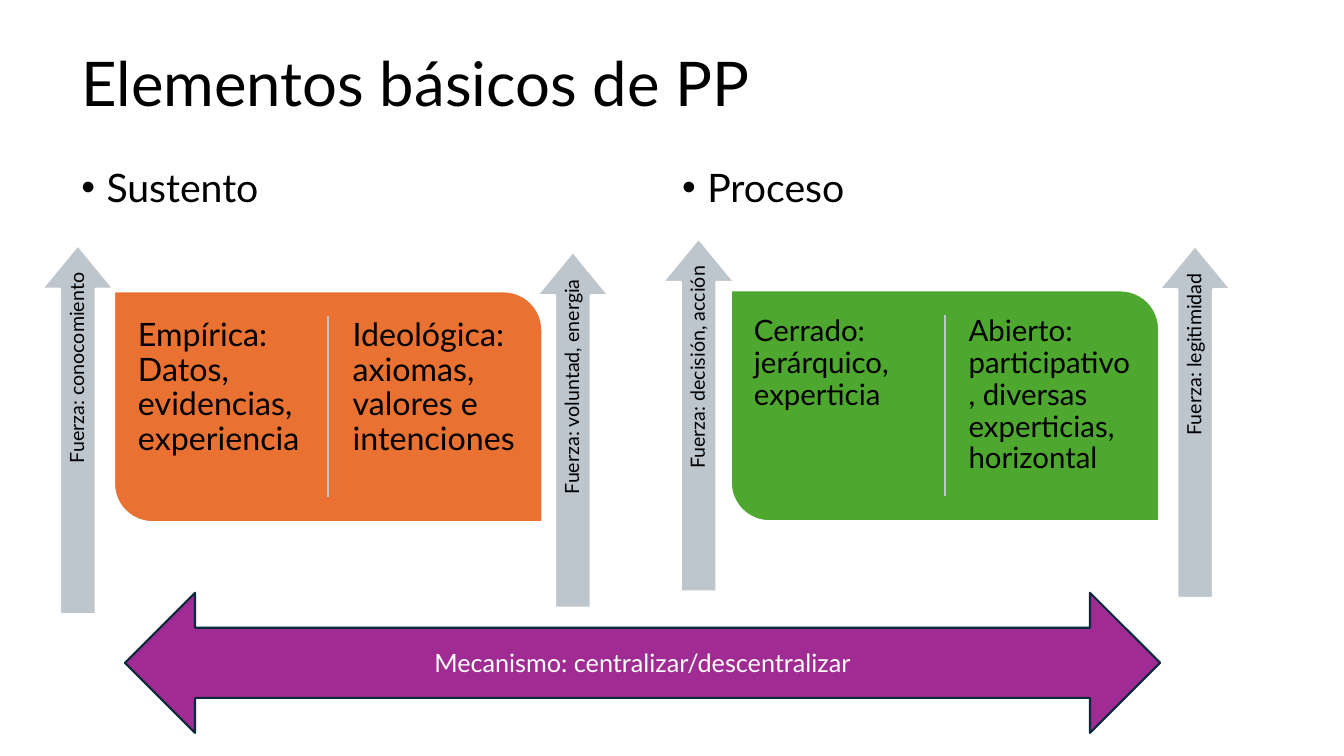
from lxml.etree import SubElement
from pptx import Presentation
from pptx.dml.color import RGBColor
from pptx.enum.shapes import MSO_CONNECTOR, MSO_SHAPE
from pptx.enum.text import MSO_ANCHOR, PP_ALIGN
from pptx.oxml.ns import qn
from pptx.util import Pt

BLACK = RGBColor(0x00, 0x00, 0x00)
WHITE = RGBColor(0xFF, 0xFF, 0xFF)
ORANGE = RGBColor(0xE9, 0x71, 0x32)
GREEN = RGBColor(0x4E, 0xA7, 0x2E)
GRAY = RGBColor(0xBD, 0xC5, 0xCD)
PURPLE = RGBColor(0xA0, 0x2B, 0x93)
NAVY = RGBColor(0x09, 0x2A, 0x39)
FONT = "Lato"


def write(sp, text, size, color=BLACK, align=PP_ALIGN.LEFT, anchor=MSO_ANCHOR.TOP,
          inset=None, spacing=0.9):
    """Put one formatted paragraph in a shape and return it."""
    tf = sp.text_frame
    tf.word_wrap = True
    tf.vertical_anchor = anchor
    if inset is not None:
        tf.margin_left = tf.margin_right = tf.margin_top = tf.margin_bottom = Pt(inset)
    tf.text = text
    p = tf.paragraphs[0]
    p.alignment = align
    p.line_spacing = spacing
    font = p.runs[0].font
    font.name, font.size, font.color.rgb = FONT, Pt(size), color
    return p


def add_box(slide, x, y, w, h):
    """Add an empty text box."""
    return slide.shapes.add_textbox(Pt(x), Pt(y), Pt(w), Pt(h))


def add_block(slide, kind, x, y, w, h, fill, line=WHITE):
    """Add a filled and outlined preset shape."""
    sp = slide.shapes.add_shape(kind, Pt(x), Pt(y), Pt(w), Pt(h))
    sp.shadow.inherit = False
    sp.fill.solid()
    sp.fill.fore_color.rgb = fill
    sp.line.color.rgb = line
    sp.line.width = Pt(1.5)
    return sp


def add_title(slide, x, y, w, h, text):
    """Add the slide title."""
    write(add_box(slide, x, y, w, h), text, 44, anchor=MSO_ANCHOR.MIDDLE)


def add_heading(slide, x, y, w, h, text):
    """Add a bulleted column heading."""
    p = write(add_box(slide, x, y, w, h), text, 28)
    p.space_before = Pt(10)
    pPr = p._p.get_or_add_pPr()
    pPr.set("marL", str(Pt(18)))
    pPr.set("indent", str(Pt(-18)))
    SubElement(pPr, qn("a:buFont"), typeface="Arial")
    SubElement(pPr, qn("a:buChar"), char="•")


def add_card(slide, x, y, w, h, fill, texts, size, inset):
    """Add a card with two texts and a divider between them."""
    card = add_block(slide, MSO_SHAPE.ROUND_2_DIAG_RECTANGLE, x, y, w, h, fill)
    card.adjustments[0], card.adjustments[1] = 0, 0.167
    mid = x + w / 2
    divider = slide.shapes.add_connector(
        MSO_CONNECTOR.STRAIGHT, Pt(mid), Pt(y + 17.3), Pt(mid), Pt(y + h - 18))
    divider.line.color.rgb = GRAY
    divider.line.width = Pt(1.5)
    SubElement(divider._element.spPr, qn("a:effectLst"))
    for left, text in zip((x + 10.1, mid + 10.4), texts):
        write(add_box(slide, left, y + 12.2, 132.5, 139.7), text, size, inset=inset)


def add_force(slide, cx, cy, length, text):
    """Add an upward arrow centred on a point, with its label along it."""
    arrow = add_block(slide, MSO_SHAPE.RIGHT_ARROW, cx - length / 2, cy - 25.5,
                      length, 51, GRAY)
    arrow.adjustments[0], arrow.adjustments[1] = 0.498, 0.607
    arrow.rotation = 270
    span = length - 15.5
    label = add_box(slide, cx - span / 2, cy - 5, span, 25)
    label.rotation = 270
    write(label, text, 14, align=PP_ALIGN.RIGHT, anchor=MSO_ANCHOR.MIDDLE, inset=4.3)


def add_mechanism(slide, x, y, w, h, text):
    """Add the double arrow at the bottom."""
    sp = add_block(slide, MSO_SHAPE.LEFT_RIGHT_ARROW, x, y, w, h, PURPLE, NAVY)
    write(sp, text, 18, WHITE, PP_ALIGN.CENTER, MSO_ANCHOR.MIDDLE, spacing=1.0)


def main():
    """Build the slide and save it."""
    prs = Presentation()
    prs.slide_width, prs.slide_height = Pt(960), Pt(540)
    slide = prs.slides.add_slide(prs.slide_layouts[6])
    add_title(slide, 51, 9.4, 828, 104.4, "Elementos básicos de PP")
    add_heading(slide, 51, 116.6, 408, 342.7, "Sustento")
    add_heading(slide, 480.2, 116.6, 408, 342.7, "Proceso")
    add_card(slide, 81.4, 208.1, 306, 164.9, ORANGE,
             ("Empírica: Datos, evidencias, experiencia",
              "Ideológica: axiomas, valores e intenciones"), 23, 7.2)
    add_card(slide, 522, 207.4, 306, 164.9, GREEN,
             ("Cerrado: jerárquico, experticia",
              "Abierto: participativo, diversas experticias, horizontal"), 21, 6.5)
    for cx, cy, length, text in (
            (55.6, 307, 263.5, "Fuerza: conocomiento"),
            (409.2, 307, 254.2, "Fuerza: voluntad, energia"),
            (499, 296.4, 252, "Fuerza: decisión, acción"),
            (853.6, 301.4, 251.5, "Fuerza: legitimidad")):
        add_force(slide, cx, cy, length, text)
    add_mechanism(slide, 89.3, 423.4, 739.4, 100.1,
                  "Mecanismo: centralizar/descentralizar")
    prs.save("out.pptx")


if __name__ == "__main__":
    main()
